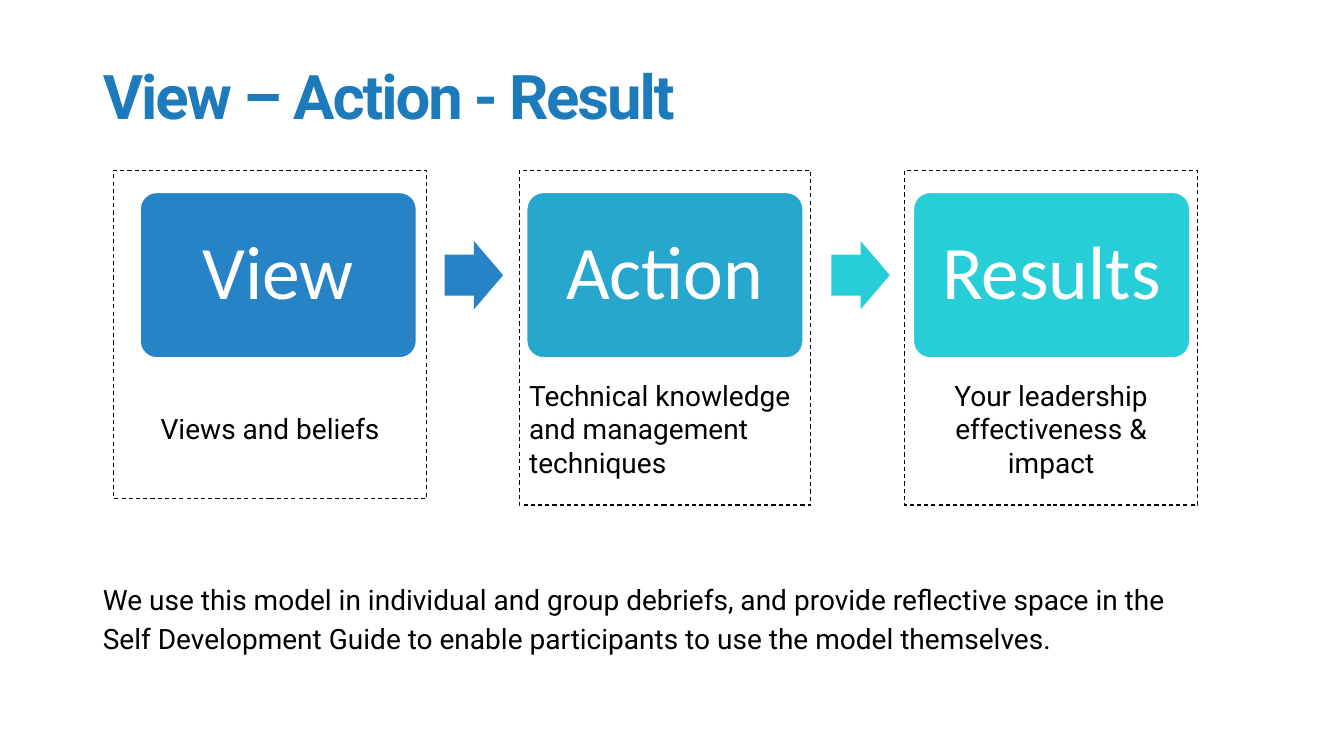
from lxml import etree
from pptx import Presentation
from pptx.dml.color import RGBColor
from pptx.enum.dml import MSO_LINE
from pptx.enum.shapes import MSO_SHAPE
from pptx.enum.text import MSO_ANCHOR, MSO_AUTO_SIZE, PP_ALIGN
from pptx.oxml.ns import qn
from pptx.util import Inches, Pt

RECTANGLE = MSO_SHAPE.RECTANGLE
ROUNDED = MSO_SHAPE.ROUNDED_RECTANGLE
ARROW = MSO_SHAPE.RIGHT_ARROW
DASH = MSO_LINE.DASH
MIDDLE = MSO_ANCHOR.MIDDLE
LEFT, CENTER = PP_ALIGN.LEFT, PP_ALIGN.CENTER
NO_FIT = MSO_AUTO_SIZE.NONE

BLACK = RGBColor(0x00, 0x00, 0x00)
WHITE = RGBColor(0xFF, 0xFF, 0xFF)
TITLE_BLUE = RGBColor(0x1E, 0x7B, 0xBB)
BLUE = RGBColor(0x26, 0x83, 0xC6)
TEAL = RGBColor(0x27, 0xA7, 0xCE)
CYAN = RGBColor(0x27, 0xCE, 0xD7)

FRAME_TOP = 1.69
CAPTION_TOP, CAPTION_BOTTOM = 3.59, 4.91
CARD_LEFT, CARD_STEP = 1.39, 3.835
ARROW_OFFSET = 3.02


def add_box(kind, left, top, width, height):
    box = slide.shapes.add_shape(kind, Inches(left), Inches(top), Inches(width), Inches(height))
    box.shadow.inherit = False
    return box


def write(frame, text, name, size, color, align):
    frame.word_wrap = True
    frame.auto_size = NO_FIT
    para = frame.paragraphs[0]
    para.text = text
    para.alignment = align
    para.space_before = Pt(0)
    para.font.name = name
    para.font.size = Pt(size)
    para.font.color.rgb = color
    return para


deck = Presentation()
deck.slide_width, deck.slide_height = Inches(13.33), Inches(7.5)
slide = deck.slides.add_slide(deck.slide_layouts[1])

title = slide.shapes.title
title.left, title.top = Inches(0.92), Inches(0.4)
title.width, title.height = Inches(11.5), Inches(1.07)
title.text_frame.vertical_anchor = MIDDLE
heading = write(title.text_frame, "View – Action - Result", "Roboto", 44, TITLE_BLUE, LEFT)
heading.line_spacing = Pt(53)
heading.font.bold = True
heading.runs[0]._r.get_or_add_rPr().set("spc", "-150")

frames = [
    (1.13, 3.1, 3.26, "Views and beliefs", CENTER),
    (5.15, 2.89, 3.32, "Technical knowledge and management techniques", LEFT),
    (8.97, 2.91, 3.32, "Your leadership effectiveness & impact", CENTER),
]
for left, width, height, caption, align in frames:
    box = add_box(RECTANGLE, left, FRAME_TOP, width, height)
    box.fill.background()
    box.line.color.rgb = BLACK
    box.line.width = Pt(0.75)
    box.line.dash_style = DASH
    frame = box.text_frame
    frame.vertical_anchor = MIDDLE
    frame.margin_top = Inches(CAPTION_TOP - FRAME_TOP)
    frame.margin_bottom = Inches(FRAME_TOP + height - CAPTION_BOTTOM)
    write(frame, caption, "Roboto", 20, BLACK, align)

cards = [("View", BLUE), ("Action", TEAL), ("Results", CYAN)]
for index, (label, color) in enumerate(cards):
    card = add_box(ROUNDED, CARD_LEFT + index * CARD_STEP, 1.91, 2.74, 1.64)
    card.adjustments[0] = 0.1
    card.fill.solid()
    card.fill.fore_color.rgb = color
    card.line.color.rgb = WHITE
    card.line.width = Pt(1)
    card.text_frame.vertical_anchor = MIDDLE
    write(card.text_frame, label, "Calibri", 54, WHITE, CENTER).line_spacing = 0.9

for index, color in enumerate([BLUE, CYAN]):
    arrow = add_box(ARROW, CARD_LEFT + ARROW_OFFSET + index * CARD_STEP, 2.39, 0.58, 0.68)
    arrow.adjustments[0] = 0.6
    arrow.adjustments[1] = 0.5
    arrow.fill.solid()
    arrow.fill.fore_color.rgb = color
    arrow.line.fill.background()

body = slide.placeholders[1]
body.left, body.top = Inches(0.92), Inches(5.68)
body.width, body.height = Inches(11.21), Inches(0.85)
properties = body.text_frame.paragraphs[0]._p.get_or_add_pPr()
properties.set("marL", "0")
properties.set("indent", "0")
etree.SubElement(properties, qn("a:buNone"))
note = write(
    body.text_frame,
    "We use this model in individual and group debriefs, and provide reflective space in the "
    "Self Development Guide to enable participants to use the model themselves.",
    "Roboto", 20, BLACK, LEFT,
)
note.line_spacing = 1.15

deck.save("out.pptx")
